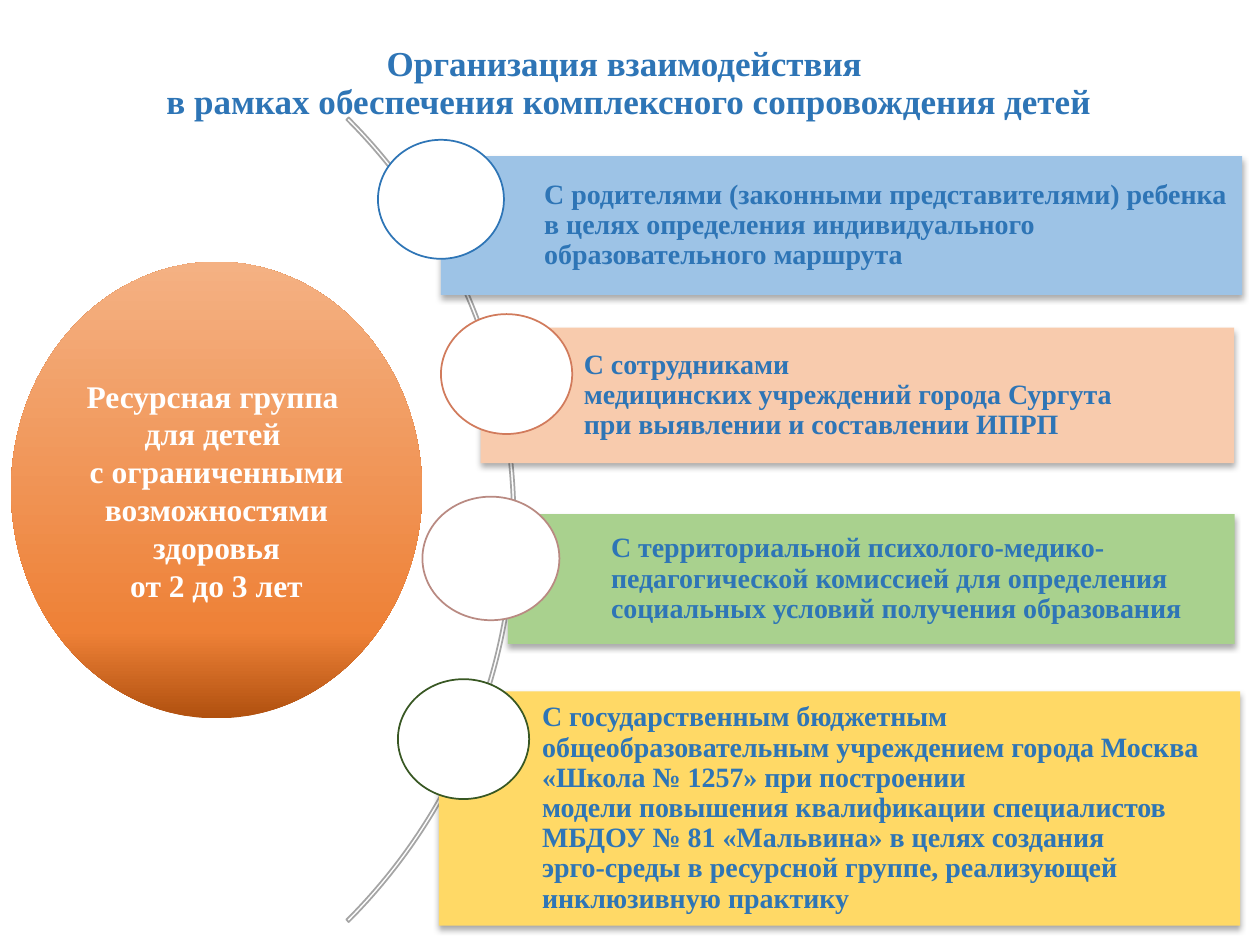
from lxml import etree
from pptx import Presentation
from pptx.dml.color import RGBColor
from pptx.enum.shapes import MSO_SHAPE
from pptx.enum.text import MSO_ANCHOR, MSO_AUTO_SIZE, PP_ALIGN
from pptx.oxml import parse_xml
from pptx.util import Pt

RECT, OVAL, ARC = MSO_SHAPE.RECTANGLE, MSO_SHAPE.OVAL, MSO_SHAPE.BLOCK_ARC
LEFT, CENTER = PP_ALIGN.LEFT, PP_ALIGN.CENTER
MIDDLE = MSO_ANCHOR.MIDDLE
NO_FIT = MSO_AUTO_SIZE.NONE
FONT, BLUE, WHITE = "Times New Roman", "2E75B6", "FFFFFF"
NS = 'xmlns:a="http://schemas.openxmlformats.org/drawingml/2006/main"'
SHADOW = (f'<a:outerShdw {NS} blurRad="{Pt(3.5)}" dist="{Pt(2.2)}" dir="5400000" '
          'rotWithShape="0"><a:srgbClr val="000000"><a:alpha val="32000"/>'
          '</a:srgbClr></a:outerShdw>')


def add_shape(kind, box, fill=None, line=None):
    sp = s.shapes.add_shape(kind, *[Pt(v) for v in box])
    sp.shadow.inherit = False
    if fill:
        sp.fill.solid()
        sp.fill.fore_color.rgb = RGBColor.from_string(fill)
    else:
        sp.fill.background()
    if line:
        sp.line.color.rgb = RGBColor.from_string(line)
        sp.line.width = Pt(1)
    else:
        sp.line.fill.background()
    return sp


def set_text(sp, text, size, color, align, spacing):
    tf = sp.text_frame
    tf.text = text
    tf.word_wrap = True
    tf.auto_size = NO_FIT
    tf.vertical_anchor = MIDDLE
    for p in tf.paragraphs:
        p.alignment = align
        p.line_spacing = spacing
        for r in p.runs:
            r.font.name = FONT
            r.font.size = Pt(size)
            r.font.bold = True
            r.font.color.rgb = RGBColor.from_string(color)


prs = Presentation()
prs.slide_width, prs.slide_height = Pt(720), Pt(540)
s = prs.slides.add_slide(prs.slide_layouts[5])

# Title
title = s.shapes.title
title.left, title.top, title.width, title.height = Pt(49), Pt(31.7), Pt(620.6), Pt(33)
set_text(title, "Организация взаимодействия \v"
         "в рамках обеспечения комплексного сопровождения детей",
         20, BLUE, CENTER, 0.9)

# Arc behind the partner bars
arc = add_shape(ARC, (-355.7, -28.1, 650.2, 650.2), line="A5A5A5")
for i, value in enumerate((189, 27, 0.003)):
    arc.adjustments[i] = value

# Partner bars, each with a circle over its left end
partners = [
    ((252, 89.3, 457.9, 79.2), "9DC3E6", (216, 79.9, 72, 68), BLUE,
     "С родителями (законными представителями) ребенка в целях определения "
     "индивидуального образовательного маршрута"),
    ((274.6, 187.2, 430.6, 77.4), "F8CBAD", (252, 179.5, 75, 68.5), "D17B5C",
     "С сотрудниками\nмедицинских учреждений города Сургута\n"
     "при выявлении и составлении ИПРП"),
    ((290.2, 293.8, 415.4, 74.2), "A9D18E", (241.4, 283.8, 78.3, 70.6), "B98A82",
     "С территориальной психолого-медико- педагогической комиссией для "
     "определения социальных условий получения образования"),
    ((250.8, 395, 457.9, 134), "FFD966", (227.4, 388.1, 75, 68.5), "385723",
     "С государственным бюджетным общеобразовательным учреждением города "
     "Москва «Школа № 1257» при построении\n"
     "модели повышения квалификации специалистов\n"
     "МБДОУ № 81 «Мальвина» в целях создания\n"
     "эрго-среды в ресурсной группе, реализующей инклюзивную практику"),
]
for bar_box, fill, circle_box, outline, text in partners:
    bar = add_shape(RECT, bar_box, fill)
    bar._element.spPr.find("{*}effectLst").append(parse_xml(SHADOW))
    set_text(bar, text, 16, BLUE, LEFT, 0.9)
    tf = bar.text_frame
    tf.margin_left = Pt(59)
    tf.margin_right = tf.margin_top = tf.margin_bottom = Pt(2.9)
    add_shape(OVAL, circle_box, WHITE, outline)

# Resource group with a three-stop gradient, dark at the bottom
group = add_shape(OVAL, (6.3, 149.6, 234.9, 260.9))
group.fill.gradient()
group.fill.gradient_angle = 90
stops = group._element.spPr.find("{*}gradFill/{*}gsLst")
for stop in list(stops):
    stops.remove(stop)
for pos, color in ((0, "B0500F"), (19, "EE8137"), (100, "F4B183")):
    stops.append(etree.fromstring(
        f'<a:gs {NS} pos="{pos * 1000}"><a:srgbClr val="{color}"/></a:gs>'))
set_text(group, "Ресурсная группа \nдля детей \n"
         "с ограниченными возможностями здоровья\nот 2 до 3 лет",
         18, WHITE, CENTER, 1.0)

prs.save("out.pptx")
